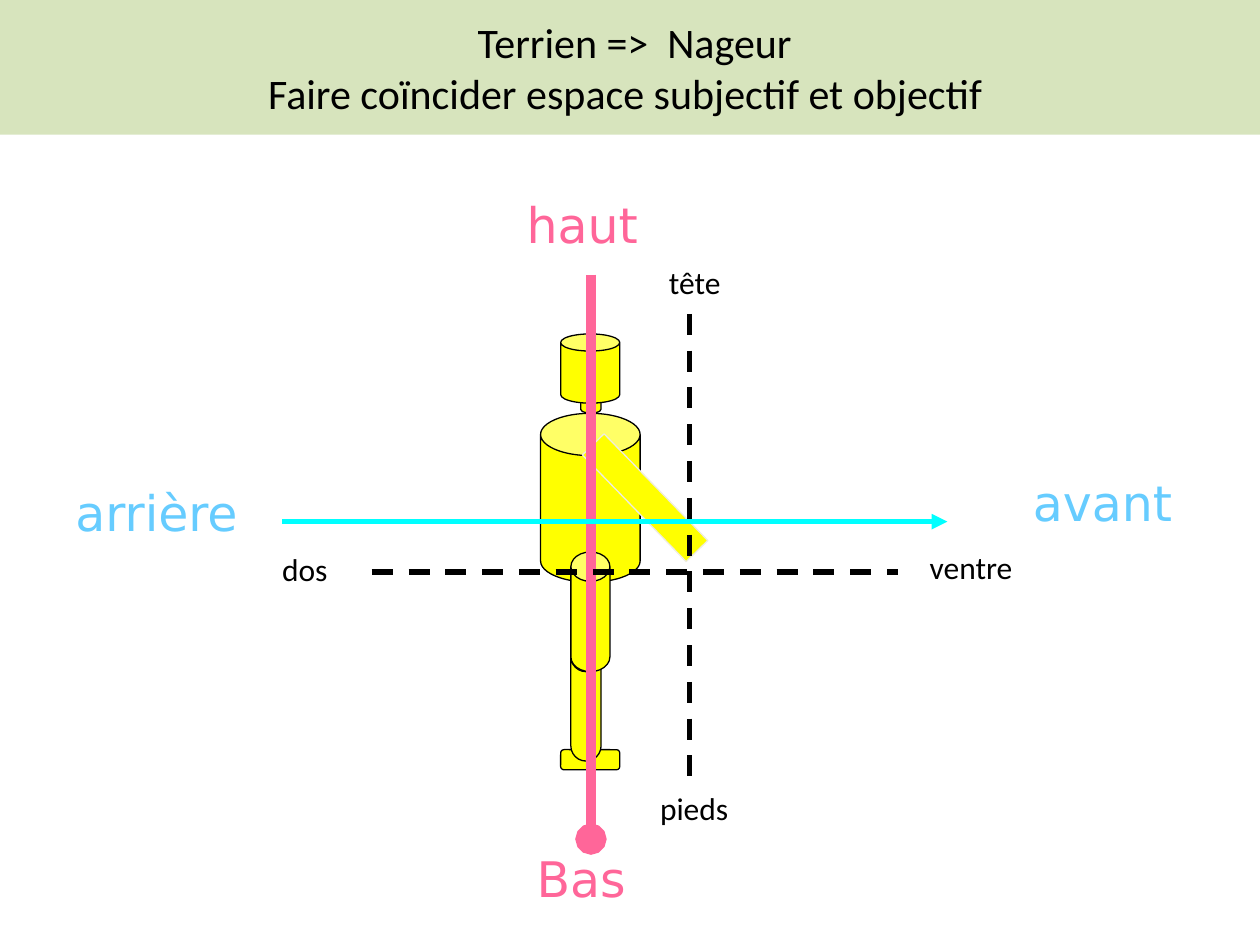
"""Build the slide on the body axes of a walker turning swimmer."""
from lxml import etree
from pptx import Presentation
from pptx.dml.color import RGBColor
from pptx.enum.dml import MSO_LINE
from pptx.enum.shapes import MSO_CONNECTOR, MSO_SHAPE
from pptx.enum.text import MSO_ANCHOR, MSO_AUTO_SIZE, PP_ALIGN
from pptx.oxml.ns import qn
from pptx.util import Pt

CAN, ROUNDED, RECTANGLE = MSO_SHAPE.CAN, MSO_SHAPE.ROUNDED_RECTANGLE, MSO_SHAPE.RECTANGLE
STRAIGHT, DASH = MSO_CONNECTOR.STRAIGHT, MSO_LINE.DASH
MIDDLE, CENTER = MSO_ANCHOR.MIDDLE, PP_ALIGN.CENTER
FIT = MSO_AUTO_SIZE.SHAPE_TO_FIT_TEXT

THEME = {
    "banner": "D7E4BD", "ink": "000000", "body": "FFFF00", "arm_edge": "EEECE1",
    "vertical": "FF6699", "horizontal": "00FFFF", "direction": "66CCFF",
    "font": "Calibri", "axis_font": "DejaVu Sans",
    "title_size": 24, "axis_size": 28, "body_size": 18,
}

SLIDE_SIZE = (720, 540)
BANNER_HEIGHT = 77
TITLE = " Terrien =>  Nageur\vFaire coïncider espace subjectif et objectif "

BODY_PARTS = [
    (ROUNDED, (320.4, 428.4, 33.8, 11.5), 0.167, 0, "ink"),
    (CAN, (331.9, 218.9, 11.5, 17.3), 0.378, 0, "ink"),
    (CAN, (320.4, 190.8, 33.8, 39.6), 0.291, 0, "ink"),
    (CAN, (326.2, 366.5, 17.3, 68.4), 1.002, 0, "ink"),
    (CAN, (308.9, 236.2, 56.9, 96.5), 0.425, 0, "ink"),
    (CAN, (326.2, 315.4, 22.3, 68.4), 0.753, 0, "ink"),
    (CAN, (360, 241.9, 17.3, 85), 0, 315.8, "arm_edge"),
]
AXES = [
    ((337.7, 157, 337.7, 479.5), "vertical", 6, "oval"),
    ((161.3, 298.1, 541.4, 298.1), "horizontal", 3, "triangle"),
    ((212.4, 326.9, 513.4, 326.9), "ink", 3, None),
    ((393.8, 179.3, 393.8, 445.7), "ink", 3, None),
]
SPACE_LABELS = [
    ("haut", (257.8, 111.6, 121.7, 37.4), "vertical"),
    ("Bas", (263.5, 485.3, 107.3, 37.4), "vertical"),
    ("avant", (547.2, 270, 139, 37.4), "direction"),
    ("arrière", (0, 275.8, 157.7, 37.4), "direction"),
]
BODY_LABELS = [
    ("tête", (375.1, 146.9, 44.6, 28.8)),
    ("pieds", (370.1, 447.1, 57.6, 28.8)),
    ("ventre", (524.2, 309.6, 64.8, 28.8)),
    ("dos", (154.1, 311, 43.2, 28.8)),
]


def points(lengths):
    return [Pt(length) for length in lengths]


def color(role):
    return RGBColor.from_string(THEME[role])


def write(frame, text, role, font, size):
    paragraph = frame.paragraphs[0]
    paragraph.text = text
    for run in paragraph.runs:
        run.font.name = THEME[font]
        run.font.size = Pt(THEME[size])
        run.font.color.rgb = color(role)
    return paragraph


def add_banner(slide):
    banner = slide.shapes.add_shape(RECTANGLE, *points((0, 0, SLIDE_SIZE[0], BANNER_HEIGHT)))
    banner.shadow.inherit = False
    banner.fill.solid()
    banner.fill.fore_color.rgb = color("banner")
    banner.line.fill.background()
    banner.text_frame.word_wrap = True
    banner.text_frame.vertical_anchor = MIDDLE
    write(banner.text_frame, TITLE, "ink", "font", "title_size").alignment = CENTER


def add_body(slide):
    body = slide.shapes.add_group_shape()
    for preset, box, adjustment, rotation, edge in BODY_PARTS:
        part = body.shapes.add_shape(preset, *points(box))
        part.shadow.inherit = False
        part.adjustments[0] = adjustment
        part.rotation = rotation
        part.fill.solid()
        part.fill.fore_color.rgb = color("body")
        part.line.color.rgb = color(edge)
        part.line.width = Pt(0.75)


def add_axis(slide, ends, role, width, tip):
    axis = slide.shapes.add_connector(STRAIGHT, *points(ends))
    axis.line.color.rgb = color(role)
    axis.line.width = Pt(width)
    if tip:
        etree.SubElement(axis.line._get_or_add_ln(), qn("a:tailEnd"), type=tip)
    else:
        axis.line.dash_style = DASH
    etree.SubElement(axis._element.spPr, qn("a:effectLst"))


def add_label(slide, text, box, role, font, size):
    label = slide.shapes.add_textbox(*points(box))
    label.text_frame.word_wrap = False
    label.text_frame.auto_size = FIT
    return write(label.text_frame, text, role, font, size)


def main():
    deck = Presentation()
    deck.slide_width, deck.slide_height = points(SLIDE_SIZE)
    slide = deck.slides.add_slide(deck.slide_layouts[6])
    add_banner(slide)
    add_body(slide)
    for axis in AXES:
        add_axis(slide, *axis)
    for text, box, role in SPACE_LABELS:
        paragraph = add_label(slide, text, box, role, "axis_font", "axis_size")
        paragraph.line_spacing = 0.9
        properties = paragraph._p.get_or_add_pPr()
        properties.set("marL", str(Pt(58.5)))
        properties.set("indent", str(Pt(-22.5)))
    for text, box in BODY_LABELS:
        add_label(slide, text, box, "ink", "font", "body_size")
    deck.save("out.pptx")


if __name__ == "__main__":
    main()
